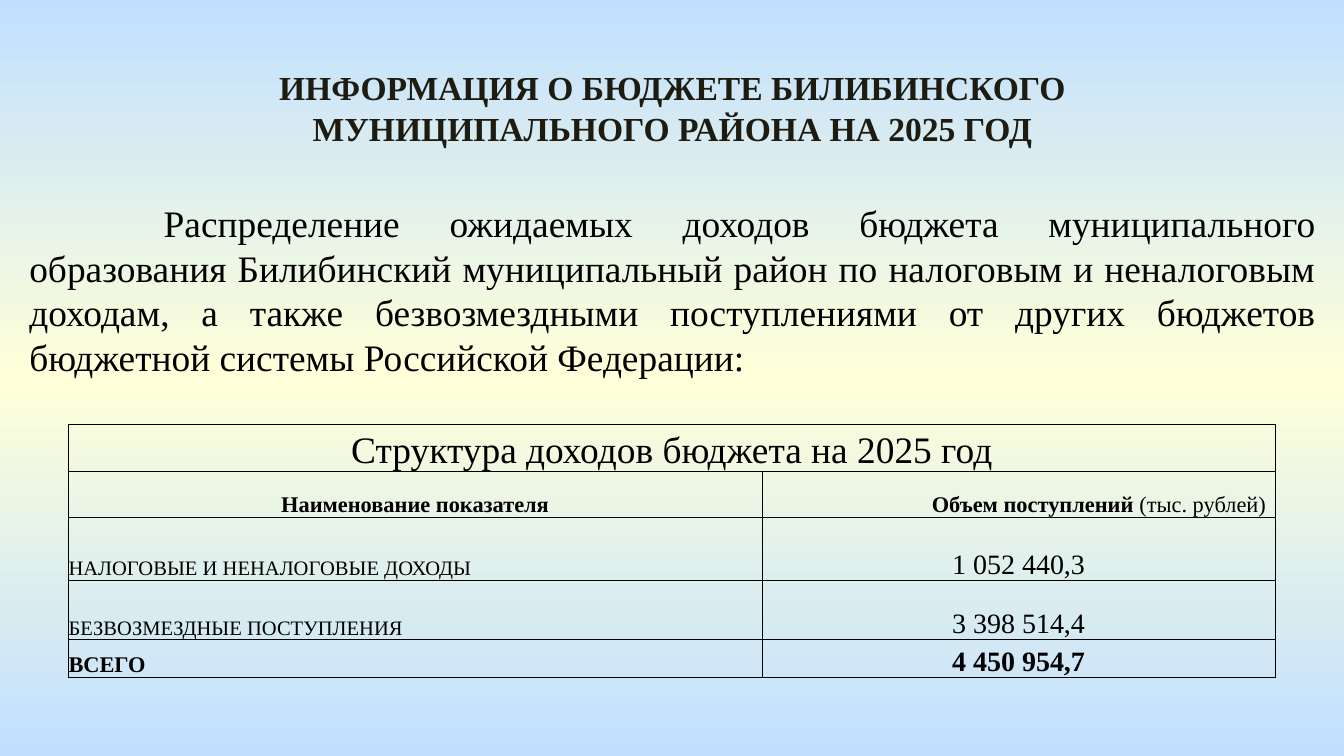
from copy import deepcopy

from lxml.etree import SubElement
from pptx import Presentation
from pptx.dml.color import RGBColor
from pptx.enum.shapes import MSO_SHAPE as Shape
from pptx.enum.text import MSO_ANCHOR as Anchor, MSO_AUTO_SIZE as Auto, PP_ALIGN as Align
from pptx.oxml.ns import qn
from pptx.util import Inches, Pt

TITLE = "ИНФОРМАЦИЯ О БЮДЖЕТЕ БИЛИБИНСКОГО МУНИЦИПАЛЬНОГО РАЙОНА НА 2025 ГОД"
INTRO = (
    "Распределение ожидаемых доходов бюджета муниципального образования "
    "Билибинский муниципальный район по налоговым и неналоговым доходам, "
    "а также безвозмездными поступлениями от других бюджетов "
    "бюджетной системы Российской Федерации:"
)
HEAD = "Структура доходов бюджета на 2025 год"
NAME = "Наименование показателя"
UNIT = [("Объем поступлений ", True), ("(тыс. рублей)", False)]
ITEMS = [
    ("НАЛОГОВЫЕ И НЕНАЛОГОВЫЕ ДОХОДЫ", "1 052 440,3"),
    ("БЕЗВОЗМЕЗДНЫЕ ПОСТУПЛЕНИЯ", "3 398 514,4"),
    ("ВСЕГО", "4 450 954,7"),
]
COLS = [5.16, 3.82]
ROWS = [0.35, 0.34, 0.47, 0.44, 0.28]
STOPS = [(0, "C1E0FF"), (0.5, "FFFFD9"), (1, "C1E0FF")]
BLACK = "000000"


def color(target, tint):
    target.rgb = RGBColor.from_string(tint)


def write(frame, text, size=12, bold=False, tint=BLACK, align=Align.LEFT):
    para = frame.paragraphs[0]
    para.alignment = align
    parts = [(text, bold)] if isinstance(text, str) else text
    for words, heavy in parts:
        run = para.add_run()
        run.text = words
        font = run.font
        font.name, font.size, font.bold = "Times New Roman", Pt(size), heavy
        color(font.color, tint)
    return para


def paint(fill):
    fill.gradient()
    fill.gradient_angle = 90
    first = fill.gradient_stops[0]._gs
    first.addnext(deepcopy(first))
    for stop, (pos, tint) in zip(fill.gradient_stops, STOPS):
        stop.position = pos
        color(stop.color, tint)


def place(shape, left, top, width, height):
    shape.left, shape.top = Inches(left), Inches(top)
    shape.width, shape.height = Inches(width), Inches(height)


def border(cell):
    props = cell._tc.get_or_add_tcPr()
    for n, side in enumerate(("lnL", "lnR", "lnT", "lnB")):
        line = props.makeelement(qn(f"a:{side}"), {"w": str(Pt(0.5))})
        fill = SubElement(line, qn("a:solidFill"))
        SubElement(fill, qn("a:srgbClr"), val=BLACK)
        props.insert(n, line)


def fill_cell(cell, text, side=0, **style):
    cell.margin_left = cell.margin_right = Inches(side)
    cell.margin_top = cell.margin_bottom = 0
    cell.vertical_anchor = Anchor.BOTTOM
    write(cell.text_frame, text, **style)


deck = Presentation()
deck.slide_width = Inches(10)
deck.slide_height = deck.slide_width * 9 // 16
slide = deck.slides.add_slide(deck.slide_layouts[5])
paint(slide.background.fill)

intro = slide.shapes.add_shape(
    Shape.RECTANGLE, Inches(0.12), Inches(1.43), Inches(9.77), Inches(1.45)
)
intro.shadow.inherit = False
intro.line.fill.background()
intro.element.set("useBgFill", "1")
intro.text_frame.word_wrap = True
para = write(intro.text_frame, INTRO, size=20, align=Align.JUSTIFY)
para._p.get_or_add_pPr().set("indent", str(Inches(1)))

title = slide.shapes.title
place(title, 1.14, 0.45, 7.73, 0.71)
frame = title.text_frame
frame.auto_size, frame.word_wrap = Auto.NONE, True
frame.vertical_anchor = Anchor.TOP
write(frame, TITLE, size=18, bold=True, tint="1E1C11", align=Align.CENTER)

table = slide.shapes.add_table(
    len(ROWS), len(COLS), Inches(0.51), Inches(3.16), Inches(sum(COLS)), Inches(sum(ROWS))
).table
table.first_row = table.horz_banding = False
for col, width in zip(table.columns, COLS):
    col.width = Inches(width)
for row, height in zip(table.rows, ROWS):
    row.height = Inches(height)
for cell in table.iter_cells():
    cell.fill.background()
    border(cell)

table.cell(0, 0).merge(table.cell(0, 1))
fill_cell(table.cell(0, 0), HEAD, size=20, align=Align.CENTER)
fill_cell(table.cell(1, 0), NAME, bold=True, align=Align.CENTER)
fill_cell(table.cell(1, 1), UNIT, side=0.07, align=Align.RIGHT)
for r, (name, amount) in enumerate(ITEMS, 2):
    last = r == len(ROWS) - 1
    fill_cell(table.cell(r, 0), name, size=12 if last else 11, bold=last)
    fill_cell(table.cell(r, 1), amount, size=15, bold=last, align=Align.CENTER)

deck.save("out.pptx")
